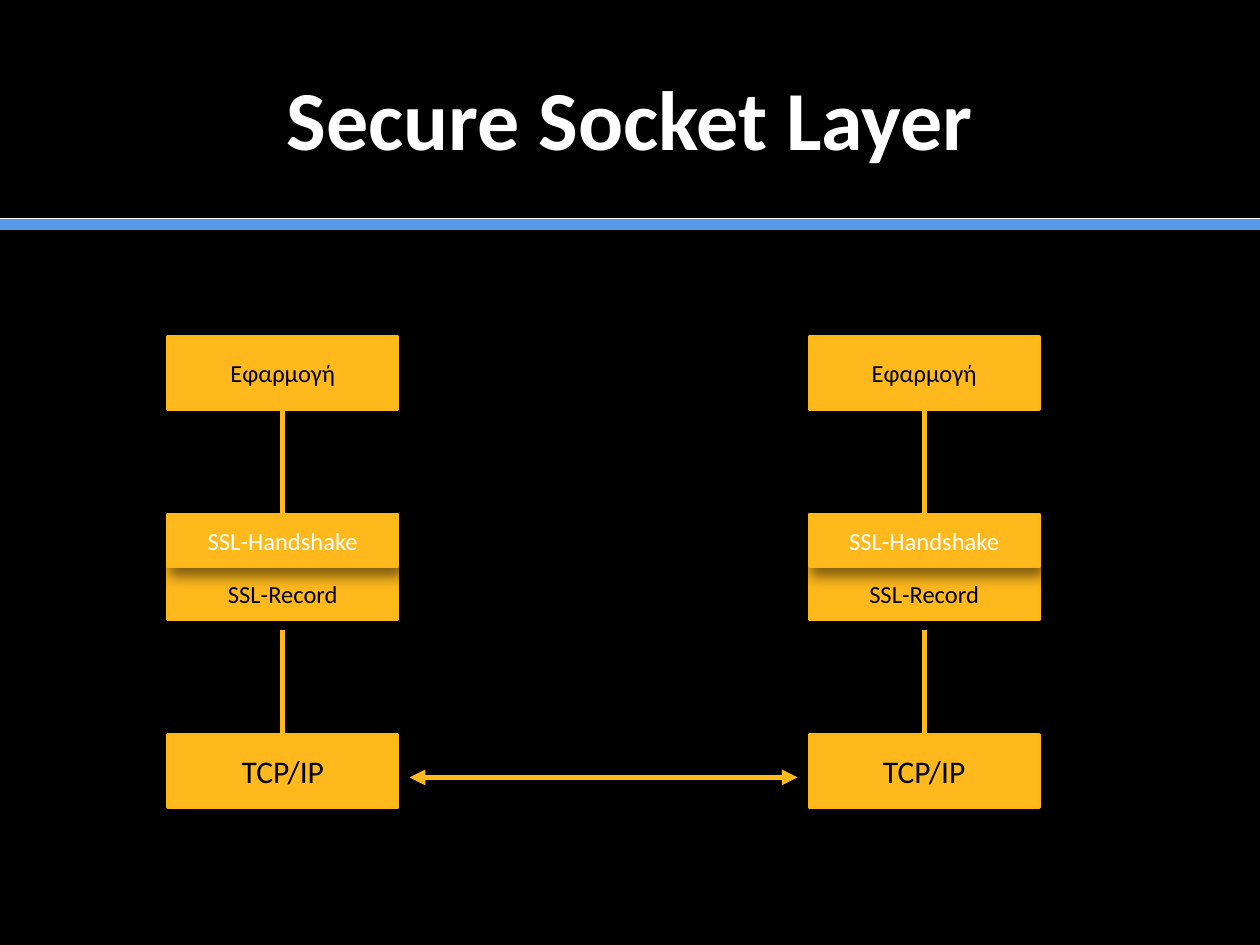
from dataclasses import dataclass

from lxml import etree
from pptx import Presentation
from pptx.dml.color import RGBColor
from pptx.enum import shapes, text
from pptx.oxml import ns
from pptx.util import Inches, Pt


@dataclass(frozen=True)
class Theme:
    font: str = "Calibri"
    black: str = "000000"
    white: str = "FFFFFF"
    blue: str = "5799E8"
    amber: str = "FFB91D"
    amber_edge: str = "FFB717"
    title_size: float = 48
    label_size: float = 14
    network_size: float = 18
    edge_width: float = 1.5
    link_width: float = 3


THEME = Theme()
TITLE = "Secure Socket Layer"
RULES = [(1.78, THEME.blue, 7), (1.73, THEME.white, 0.5)]
HOST_LEFTS = [1.33, 6.42]
BOX_WIDTH = 1.83
LAYERS = [
    ("Εφαρμογή", 2.67, 0.58, THEME.label_size, THEME.black),
    ("SSL-Record", 4.5, 0.42, THEME.label_size, THEME.black),
    ("TCP/IP", 5.83, 0.58, THEME.network_size, THEME.black),
    ("SSL-Handshake", 4.08, 0.42, THEME.label_size, THEME.white),
]
RECORD_LINK_TOP = 5
NETWORK_LINK_Y = 6.17
NETWORK_LINK_GAP = 0.09


def color(value):
    return RGBColor.from_string(value)


def add_effects(shape, shadowed):
    effects = etree.SubElement(shape._element.spPr, ns.qn("a:effectLst"))
    if shadowed:
        shadow = etree.SubElement(
            effects, ns.qn("a:outerShdw"), blurRad=str(Pt(8)), dist=str(Pt(5)),
            dir=str(70 * 60000), algn="tl", rotWithShape="0")
        tint = etree.SubElement(shadow, ns.qn("a:srgbClr"), val=THEME.black)
        etree.SubElement(tint, ns.qn("a:alpha"), val="50000")


def add_line(parent, start, end, line_color, width):
    points = [Inches(value) for value in (*start, *end)]
    connector = parent.add_connector(shapes.MSO_CONNECTOR.STRAIGHT, *points)
    connector.line.color.rgb = color(line_color)
    connector.line.width = Pt(width)
    add_effects(connector, False)
    return connector


def write_text(shape, content, size, text_color, bold=False):
    frame = shape.text_frame
    frame.word_wrap = True
    frame.vertical_anchor = text.MSO_ANCHOR.MIDDLE
    paragraph = frame.paragraphs[0]
    paragraph.text = content
    paragraph.alignment = text.PP_ALIGN.CENTER
    font = paragraph.font
    font.name, font.size, font.bold = THEME.font, Pt(size), bold
    font.color.rgb = color(text_color)


def add_layer(parent, left, layer):
    label, top, height, size, text_color = layer
    box = parent.add_shape(shapes.MSO_SHAPE.RECTANGLE, Inches(left), Inches(top),
                           Inches(BOX_WIDTH), Inches(height))
    box.fill.solid()
    box.fill.fore_color.rgb = color(THEME.amber)
    box.line.color.rgb = color(THEME.amber_edge)
    box.line.width = Pt(THEME.edge_width)
    add_effects(box, True)
    write_text(box, label, size, text_color)
    return box


def add_host(slide, left):
    parent = slide.shapes.add_group_shape().shapes
    application, record, network, handshake = [
        add_layer(parent, left, layer) for layer in LAYERS]
    middle = left + BOX_WIDTH / 2
    upper = add_line(parent, (middle, 3.25), (middle, 4.08), THEME.amber, THEME.link_width)
    upper.begin_connect(application, 2)
    upper.end_connect(handshake, 0)
    lower = add_line(parent, (middle, RECORD_LINK_TOP), (middle, 5.83),
                     THEME.amber, THEME.link_width)
    lower.end_connect(network, 0)


def add_network_link(slide):
    start = HOST_LEFTS[0] + BOX_WIDTH + NETWORK_LINK_GAP
    end = HOST_LEFTS[1] - NETWORK_LINK_GAP
    link = add_line(slide.shapes, (start, NETWORK_LINK_Y), (end, NETWORK_LINK_Y),
                    THEME.amber, THEME.link_width)
    for tag in ("a:headEnd", "a:tailEnd"):
        etree.SubElement(link.line._get_or_add_ln(), ns.qn(tag), type="triangle")


def main():
    presentation = Presentation()
    presentation.slide_width, presentation.slide_height = Inches(10), Inches(7.5)
    slide = presentation.slides.add_slide(presentation.slide_layouts[6])
    slide.background.fill.solid()
    slide.background.fill.fore_color.rgb = color(THEME.black)
    for y, line_color, width in RULES:
        add_line(slide.shapes, (0, y), (10, y), line_color, width)
    title = slide.shapes.add_textbox(Inches(0.5), Inches(0.3), Inches(9), Inches(1.25))
    write_text(title, TITLE, THEME.title_size, THEME.white, bold=True)
    for left in HOST_LEFTS:
        add_host(slide, left)
    add_network_link(slide)
    presentation.save("out.pptx")


if __name__ == "__main__":
    main()
